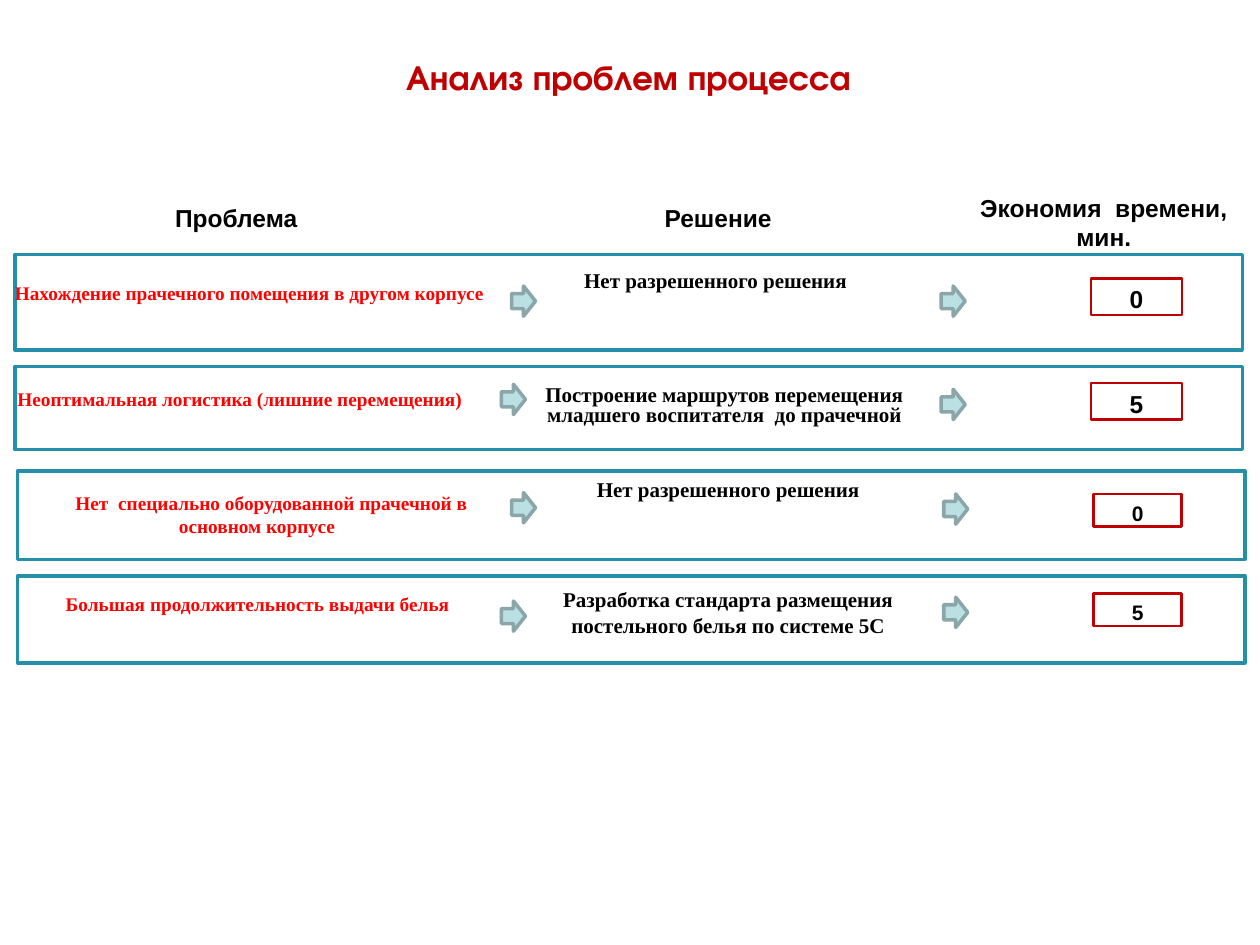
"""Builds the slide that lists process problems, solutions and time saved."""
import pptx
import pptx.util
import pptx.dml.color
import pptx.enum.shapes
import pptx.enum.text

Inches = pptx.util.Inches
SHAPE = pptx.enum.shapes.MSO_SHAPE
ANCHOR = pptx.enum.text.MSO_ANCHOR
ALIGN = pptx.enum.text.PP_ALIGN

COLORS = {"title": "C00000", "text": "000000", "problem": "FF0000", "frame": "248FA8",
          "saving": "C00000", "arrow": "BBE0E3", "arrow_line": "8AA6A8"}
SERIF = "Times New Roman"
LABEL_INSETS = (0.1, 0.09, 0.1, 0.01)
HEADER_INSETS = (0.1, 0.05, 0.1, 0.01)
PLAIN_INSETS = (0.1, 0.05, 0.1, 0.05)

TITLE = "Анализ проблем процесса"
HEADERS = [
    ("Проблема", (0.96, 1.56, 1.83, 0.3)),
    ("Решение", (4.83, 1.56, 1.74, 0.3)),
    ("Экономия  времени, мин.", (7.52, 1.48, 2.48, 0.53)),
]
ROWS = [
    {"frame": (0.12, 2.02, 9.74, 0.76), "arrows": [(4.06, 2.27), (7.47, 2.27)],
     "problem": ("Нахождение прачечного помещения в другом корпусе", (0.02, 2.05, 4, 0.38),
                 {"align": ALIGN.LEFT, "spacing": 1.5}),
     "solution": ("Нет разрешенного решения", (3.98, 2.03, 3.4, 0.31), {}),
     "saving": ("0", (8.66, 2.21, 0.72, 0.29), 14)},
    {"frame": (0.12, 2.91, 9.74, 0.66), "arrows": [(3.98, 3.05), (7.47, 3.09)],
     "problem": ("Неоптимальная логистика (лишние перемещения)", (0.04, 2.98, 3.83, 0.29),
                 {"align": ALIGN.LEFT}),
     "solution": ("Построение маршрутов перемещения младшего воспитателя  до прачечной",
                  (4.14, 2.97, 3.22, 0.43), {"spacing": 0.8}),
     "saving": ("5", (8.66, 3.04, 0.72, 0.29), 14)},
    {"frame": (0.14, 3.74, 9.74, 0.7), "arrows": [(4.06, 3.91), (7.49, 3.92)],
     "problem": ("Нет  специально оборудованной прачечной в основном корпусе",
                 (0.14, 3.81, 3.8, 0.47), {"indent": 0.23}),
     "solution": ("Нет разрешенного решения", (4.14, 3.75, 3.28, 0.29),
                  {"spacing": 0.93, "anchor": ANCHOR.TOP, "insets": PLAIN_INSETS}),
     "saving": ("0", (8.68, 3.92, 0.7, 0.26), 12)},
    {"frame": (0.14, 4.57, 9.74, 0.69), "arrows": [(3.98, 4.77), (7.49, 4.74)],
     "problem": ("Большая продолжительность выдачи белья", (0.25, 4.61, 3.59, 0.29), {}),
     "solution": ("Разработка стандарта размещения постельного белья по системе 5С",
                  (4.06, 4.61, 3.44, 0.5), {"anchor": ANCHOR.TOP, "insets": PLAIN_INSETS}),
     "saving": ("5", (8.68, 4.71, 0.7, 0.26), 12)},
]


def rgb(name):
    return pptx.dml.color.RGBColor.from_string(COLORS[name])


def write(sp, text, font, size, color, align=ALIGN.CENTER, anchor=ANCHOR.MIDDLE,
          insets=LABEL_INSETS, spacing=None, indent=0):
    tf = sp.text_frame
    tf.word_wrap = True
    tf.vertical_anchor = anchor
    tf.margin_left, tf.margin_top, tf.margin_right, tf.margin_bottom = map(Inches, insets)
    p = tf.paragraphs[0]
    p.text = text
    p.alignment = align
    if spacing:
        p.line_spacing = spacing
    if indent:
        p._p.get_or_add_pPr().set("indent", str(Inches(indent)))
    r = p.runs[0]
    r.font.name = font
    r.font.size = pptx.util.Pt(size)
    r.font.bold = True
    r.font.color.rgb = rgb(color)


def add_text(slide, text, box, font, size, color, **style):
    sp = slide.shapes.add_textbox(*map(Inches, box))
    write(sp, text, font, size, color, **style)


def add_outline(slide, kind, box, line, width, fill=None):
    sp = slide.shapes.add_shape(kind, *map(Inches, box))
    sp.shadow.inherit = False
    if fill:
        sp.fill.solid()
        sp.fill.fore_color.rgb = rgb(fill)
    else:
        sp.fill.background()
    sp.line.color.rgb = rgb(line)
    sp.line.width = pptx.util.Pt(width)
    return sp


def add_row(slide, row):
    add_outline(slide, SHAPE.RECTANGLE, row["frame"], "frame", 2)
    text, box, style = row["problem"]
    add_text(slide, text, box, SERIF, 11, "problem", **style)
    text, box, style = row["solution"]
    add_text(slide, text, box, SERIF, 12, "text", **style)
    text, box, size = row["saving"]
    sp = add_outline(slide, SHAPE.RECTANGLE, box, "saving", 1.5)
    write(sp, text, "Arial", size, "text", spacing=0.8)
    for left, top in row["arrows"]:
        add_outline(slide, SHAPE.RIGHT_ARROW, (left, top, 0.19, 0.24), "arrow_line", 2, "arrow")


def main():
    prs = pptx.Presentation()
    prs.slide_width, prs.slide_height = Inches(10), Inches(7.5)
    slide = prs.slides.add_slide(prs.slide_layouts[6])
    add_text(slide, TITLE, (0.24, 0.36, 9.5, 0.93), "TeX Gyre Adventor", 20, "title",
             anchor=ANCHOR.TOP, insets=(0.1, 0.08, 0.1, 0.05))
    for text, box in HEADERS:
        add_text(slide, text, box, "Arial", 14, "text", anchor=ANCHOR.TOP, insets=HEADER_INSETS)
    for row in ROWS:
        add_row(slide, row)
    prs.save("out.pptx")


if __name__ == "__main__":
    main()
